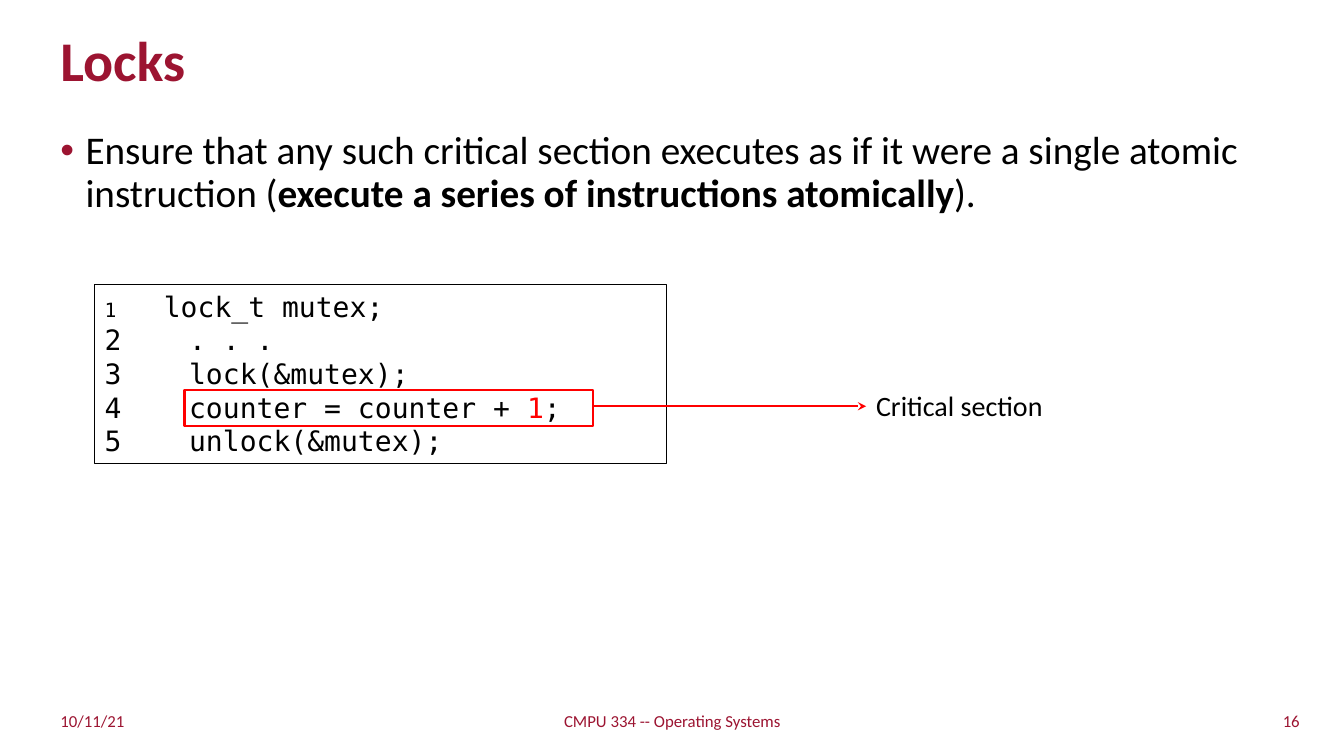
import pptx
import pptx.util
import pptx.dml.color
import pptx.enum.shapes
import pptx.enum.text
import pptx.oxml
import pptx.oxml.ns
from pptx.util import Inches

COLORS = {"crimson": "9C1431", "black": "000000", "red": "FF0000"}
SANS, MONO = "Calibri", "DejaVu Sans Mono"
ALIGN = pptx.enum.text.PP_ALIGN
ANCHOR = pptx.enum.text.MSO_ANCHOR

TITLE = [[("Locks", 40, "crimson", True)]]
BODY = [[
    ("Ensure that any such critical section executes as if it were a single atomic instruction (", 28, "black", False),
    ("execute a series of instructions atomically", 28, "black", True),
    (").", 28, "black", False),
]]
CODE = [
    [("1    ", 14, "black", False), ("lock_t mutex;", 20, "black", False)],
    [("2    . . .", 20, "black", False)],
    [("3    lock(&mutex);", 20, "black", False)],
    [("4    counter = counter + ", 20, "black", False), ("1", 20, "red", False), (";", 20, "black", False)],
    [("5    unlock(&mutex);", 20, "black", False)],
]
CALLOUT = [[("Critical section", 20, "black", False)]]
FOOTERS = [
    ("10/11/21", 0.5, 3.76, ALIGN.LEFT),
    ("CMPU 334 -- Operating Systems", 4.42, 4.5, ALIGN.CENTER),
    ("16", 9.23, 3.76, ALIGN.RIGHT),
]
CODE_BOX = (0.94, 2.82, 5.67, 1.78)
CRITICAL_BOX = (1.83, 3.87, 4.05, 0.36)
CALLOUT_BOX = (8.59, 3.81, 1.88, 0.44)
ARROW_Y = 4.03


def color(name):
    return pptx.dml.color.RGBColor.from_string(COLORS[name])


def write(shape, lines, font=SANS, align=ALIGN.LEFT, anchor=ANCHOR.TOP, wrap=True, spacing=None):
    frame = shape.text_frame
    frame.word_wrap = wrap
    frame.vertical_anchor = anchor
    for index, line in enumerate(lines):
        paragraph = frame.add_paragraph() if index else frame.paragraphs[0]
        paragraph.alignment = align
        if spacing:
            paragraph.line_spacing = spacing
        for text, size, color_name, bold in line:
            run = paragraph.add_run()
            run.text = text
            run.font.name = font
            run.font.size = pptx.util.Pt(size)
            run.font.bold = bold
            run.font.color.rgb = color(color_name)
    return frame


def add_text(slide, box, lines, **options):
    return write(slide.shapes.add_textbox(*map(Inches, box)), lines, **options)


def add_outline(slide, box, color_name, width):
    rectangle = pptx.enum.shapes.MSO_SHAPE.RECTANGLE
    shape = slide.shapes.add_shape(rectangle, *map(Inches, box))
    shape.shadow.inherit = False
    shape.fill.background()
    shape.line.color.rgb = color(color_name)
    shape.line.width = pptx.util.Pt(width)
    return shape


def add_bullet(paragraph):
    properties = paragraph._p.get_or_add_pPr()
    properties.set("marL", str(Inches(0.25)))
    properties.set("indent", str(Inches(-0.25)))
    namespace = pptx.oxml.ns.nsdecls("a")
    for xml in (
        f'<a:buClr {namespace}><a:srgbClr val="{COLORS["crimson"]}"/></a:buClr>',
        f'<a:buFont {namespace} typeface="Arial"/>',
        f'<a:buChar {namespace} char="•"/>',
    ):
        properties.append(pptx.oxml.parse_xml(xml))


def add_arrow(slide, start, end, y):
    straight = pptx.enum.shapes.MSO_CONNECTOR.STRAIGHT
    arrow = slide.shapes.add_connector(straight, *map(Inches, (start, y, end, y)))
    arrow.line.color.rgb = color("red")
    arrow.line.width = pptx.util.Pt(1.5)
    namespace = pptx.oxml.ns.nsdecls("a")
    arrow.line._get_or_add_ln().append(pptx.oxml.parse_xml(f'<a:tailEnd {namespace} type="stealth"/>'))
    arrow._element.spPr.append(pptx.oxml.parse_xml(f"<a:effectLst {namespace}/>"))


def main():
    presentation = pptx.Presentation()
    presentation.slide_width = Inches(13.33)
    presentation.slide_height = Inches(7.5)
    slide = presentation.slides.add_slide(presentation.slide_layouts[6])

    add_text(slide, (0.5, 0.25, 11.45, 0.75), TITLE, anchor=ANCHOR.MIDDLE, spacing=0.9)
    body = add_text(slide, (0.5, 1.25, 12.33, 5.45), BODY, spacing=0.9)
    add_bullet(body.paragraphs[0])

    write(add_outline(slide, CODE_BOX, "black", 0.75), CODE, font=MONO)
    add_text(slide, CALLOUT_BOX, CALLOUT, wrap=False)
    add_outline(slide, CRITICAL_BOX, "red", 1.5)
    add_arrow(slide, CRITICAL_BOX[0] + CRITICAL_BOX[2], CALLOUT_BOX[0], ARROW_Y)

    for text, left, width, align in FOOTERS:
        line = [(text, 12, "crimson", False)]
        add_text(slide, (left, 6.95, width, 0.4), [line], align=align, anchor=ANCHOR.MIDDLE)

    presentation.save("out.pptx")


if __name__ == "__main__":
    main()
